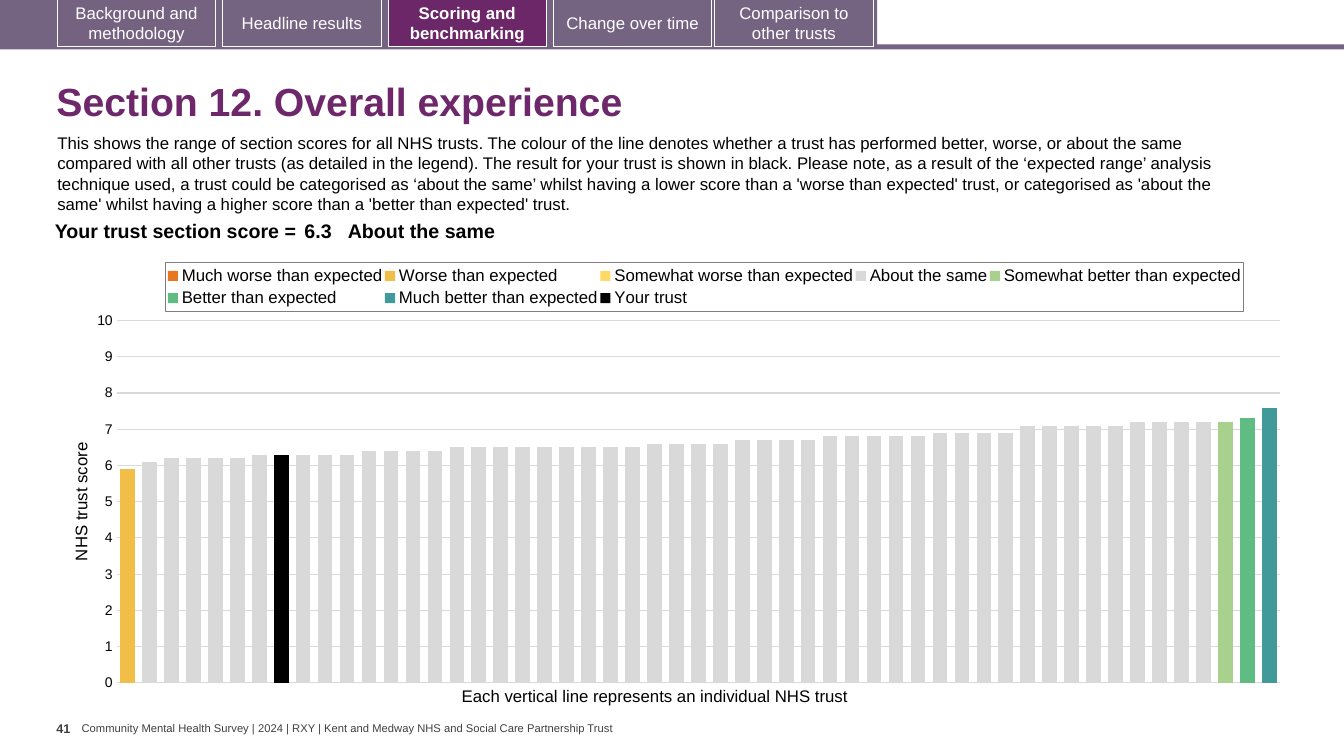
"""Build the overall experience benchmarking page with its trust score chart."""
from copy import deepcopy
from dataclasses import dataclass
from itertools import chain, repeat

from lxml.etree import SubElement
from pptx import Presentation
from pptx.chart.data import CategoryChartData
from pptx.dml.color import RGBColor
from pptx.enum.chart import XL_CHART_TYPE as ChartType
from pptx.enum.chart import XL_LEGEND_POSITION as LegendPosition
from pptx.enum.chart import XL_TICK_LABEL_POSITION as LabelPosition
from pptx.enum.chart import XL_TICK_MARK as TickMark
from pptx.enum.shapes import MSO_SHAPE as Preset
from pptx.enum.text import MSO_ANCHOR as Anchor
from pptx.enum.text import PP_ALIGN as Align
from pptx.oxml import parse_xml
from pptx.oxml.ns import nsdecls, qn
from pptx.util import Inches, Pt

BLACK = RGBColor(0x00, 0x00, 0x00)
WHITE = RGBColor(0xFF, 0xFF, 0xFF)
GREY = RGBColor(0x40, 0x40, 0x40)
GRID = RGBColor(0xD9, 0xD9, 0xD9)
PLUM = RGBColor(0x6D, 0x27, 0x6A)
ACTIVE = RGBColor(0x6B, 0x27, 0x68)
MAUVE = RGBColor(0x75, 0x63, 0x82)
MAUVE_DARK = RGBColor(0x74, 0x62, 0x80)
ORANGE = RGBColor(0xE8, 0x77, 0x22)
AMBER = RGBColor(0xF1, 0xBE, 0x48)
YELLOW = RGBColor(0xFF, 0xD9, 0x66)
LIGHT_GREEN = RGBColor(0xA9, 0xD1, 0x8E)
GREEN = RGBColor(0x5F, 0xBD, 0x83)
TEAL = RGBColor(0x41, 0x99, 0x99)

TRUST_COUNT = 53
INTRO = (
    "This shows the range of section scores for all NHS trusts. The colour of the line denotes "
    "whether a trust has performed better, worse, or about the same compared with all other trusts "
    "(as detailed in the legend). The result for your trust is shown in black. Please note, as a "
    "result of the ‘expected range’ analysis technique used, a trust could be categorised as ‘about "
    "the same’ whilst having a lower score than a 'worse than expected' trust, or categorised as "
    "'about the same' whilst having a higher score than a 'better than expected' trust."
)


@dataclass
class Band:
    left: float
    top: float
    width: float
    height: float
    fill: RGBColor


@dataclass
class Tab:
    label: str
    left: float
    fill: RGBColor
    bold: bool = False


@dataclass
class Rating:
    name: str
    color: RGBColor
    first: int = 0
    runs: tuple = ()

    def values(self):
        scores = list(chain.from_iterable(repeat(score, count) for score, count in self.runs))
        before = [None] * self.first
        return before + scores + [None] * (TRUST_COUNT - self.first - len(scores))


BANDS = [
    Band(0, 0.44, 13.33, 0.05, MAUVE),
    Band(0, 0, 8.7, 0.47, MAUVE),
    Band(0.59, 0, 1.54, 0.46, MAUVE_DARK),
    Band(3.86, 0, 1.54, 0.46, ACTIVE),
]
TABS = [
    Tab("Background and methodology", 0.57, MAUVE_DARK),
    Tab("Headline results", 2.21, MAUVE),
    Tab("Scoring and benchmarking", 3.85, ACTIVE, True),
    Tab("Change over time", 5.49, MAUVE),
    Tab("Comparison to other trusts", 7.09, MAUVE),
]
SAME_RUNS = ((6.1, 1), (6.2, 4), (6.3, 5), (6.4, 4), (6.5, 9), (6.6, 4),
             (6.7, 4), (6.8, 5), (6.9, 4), (7.1, 5), (7.2, 4))
RATINGS = [
    Rating("Much worse than expected", ORANGE),
    Rating("Worse than expected", AMBER, 0, ((5.9, 1),)),
    Rating("Somewhat worse than expected", YELLOW),
    Rating("About the same", GRID, 1, SAME_RUNS),
    Rating("Somewhat better than expected", LIGHT_GREEN, 50, ((7.2, 1),)),
    Rating("Better than expected", GREEN, 51, ((7.3, 1),)),
    Rating("Much better than expected", TEAL, 52, ((7.6, 1),)),
    Rating("Your trust", BLACK, 7, ((6.3, 1),)),
]


def style_font(font, size: float, color: RGBColor = BLACK, bold: bool = False) -> None:
    for name, value in {"name": "Arial", "size": Pt(size), "bold": bold}.items():
        setattr(font, name, value)
    font.color.rgb = color


def write(frame, text: str, size: float, color: RGBColor = BLACK, bold: bool = False,
          align=Align.LEFT, **settings) -> None:
    for name, value in settings.items():
        setattr(frame, name, value)
    para = frame.paragraphs[0]
    para.alignment = align
    span = para.add_run()
    span.text = text
    style_font(span.font, size, color, bold)


def add_rectangle(page, left, top, width, height, fill: RGBColor):
    shape = page.shapes.add_shape(
        Preset.RECTANGLE, Inches(left), Inches(top), Inches(width), Inches(height))
    shape.shadow.inherit = False
    shape.fill.solid()
    shape.fill.fore_color.rgb = fill
    shape.line.fill.background()
    return shape


def add_text(page, left, top, width, height, text: str, size: float, **settings) -> None:
    box = page.shapes.add_textbox(Inches(left), Inches(top), Inches(width), Inches(height))
    write(box.text_frame, text, size, **settings)


def place(parent, position: int, **lengths) -> None:
    """Give a chart part a manual layout."""
    for old in parent.findall(qn("c:layout")):
        parent.remove(old)
    layout = parse_xml(f"<c:layout {nsdecls('c')}><c:manualLayout/></c:layout>")
    for tag, value in lengths.items():
        SubElement(layout[0], qn(f"c:{tag}")).set("val", str(value))
    parent.insert(position, layout)


def move_last_to_right_axis(chart) -> None:
    """Draw the last series against a second pair of axes."""
    area = chart.plots[0]._element.getparent()
    bars = area.find(qn("c:barChart"))
    right_bars = deepcopy(bars)
    bars.remove(bars.findall(qn("c:ser"))[-1])
    for series in right_bars.findall(qn("c:ser"))[:-1]:
        right_bars.remove(series)
    bars.addnext(right_bars)
    left_axes = [area.find(qn("c:catAx")), area.find(qn("c:valAx"))]
    right_axes = [deepcopy(axis) for axis in left_axes]
    numbers = {axis.find(qn("c:axId")).get("val"): str(index)
               for index, axis in enumerate(left_axes, 5001)}
    for part in [right_bars, *right_axes]:
        for tag in ("c:axId", "c:crossAx"):
            for node in part.findall(qn(tag)):
                node.set("val", numbers[node.get("val")])
    value_axis = right_axes[1]
    for tag in ("c:majorGridlines", "c:title"):
        value_axis.remove(value_axis.find(qn(tag)))
    value_axis.find(qn("c:axPos")).set("val", "r")
    value_axis.find(qn("c:tickLblPos")).set("val", "none")
    value_axis.find(qn("c:crosses")).set("val", "max")
    left_axes[1].addnext(right_axes[0])
    right_axes[0].addnext(value_axis)


def add_score_chart(page) -> None:
    data = CategoryChartData()
    data.categories = [str(number) for number in range(1, TRUST_COUNT + 1)]
    for rating in RATINGS:
        data.add_series(rating.name, rating.values())
    chart = page.shapes.add_chart(ChartType.COLUMN_CLUSTERED, Inches(0.67), Inches(2.47),
                                  Inches(12.15), Inches(4.44), data).chart
    style_font(chart.font, 10)
    chart.has_title = False
    plot = chart.plots[0]
    for name, value in {"gap_width": 50, "overlap": 100, "vary_by_categories": False}.items():
        setattr(plot, name, value)
    for series, rating in zip(plot.series, RATINGS):
        series.format.fill.solid()
        series.format.fill.fore_color.rgb = rating.color
    chart.category_axis.visible = False
    axis = chart.value_axis
    for name, value in {"minimum_scale": 0, "maximum_scale": 10, "major_unit": 1,
                        "major_tick_mark": TickMark.NONE, "minor_tick_mark": TickMark.NONE,
                        "tick_label_position": LabelPosition.NEXT_TO_AXIS}.items():
        setattr(axis, name, value)
    axis.format.line.fill.background()
    axis.major_gridlines.format.line.color.rgb = GRID
    axis.major_gridlines.format.line.width = Pt(0.75)
    style_font(axis.tick_labels.font, 10)
    write(axis.axis_title.text_frame, "NHS trust score", 12)
    chart.has_legend = True
    legend = chart.legend
    legend.position = LegendPosition.TOP
    legend.include_in_layout = False
    style_font(legend.font, 12)
    legend._element.find(qn("c:txPr")).addprevious(parse_xml(
        f'<c:spPr {nsdecls("c", "a")}><a:ln w="9525"><a:solidFill><a:srgbClr val="7F7F7F"/>'
        "</a:solidFill></a:ln></c:spPr>"))
    place(legend._element, 1, xMode="edge", yMode="edge", x=0.08, y=0.03, w=0.88, h=0.11)
    place(plot._element.getparent(), 0, layoutTarget="inner", xMode="edge", yMode="edge",
          x=0.04, y=0.16, w=0.95, h=0.81)
    move_last_to_right_axis(chart)


def add_score_table(page) -> None:
    columns = [("Your trust section score =", 2.63, Align.RIGHT, 0.04),
               ("6.3", 0.47, Align.LEFT, 0.04), ("About the same", 8.59, Align.LEFT, 0)]
    table = page.shapes.add_table(1, len(columns), Inches(0.35), Inches(2.15),
                                  Inches(11.69), Inches(0.22)).table
    table.first_row = table.horz_banding = False
    for index, (text, width, align, side) in enumerate(columns):
        table.columns[index].width = Inches(width)
        cell = table.cell(0, index)
        cell.fill.background()
        for name, inset in {"left": side, "right": side, "top": 0.04, "bottom": 0.04}.items():
            setattr(cell, f"margin_{name}", Inches(inset))
        write(cell.text_frame, text, 14, bold=True, align=align)


def main() -> None:
    deck = Presentation()
    deck.slide_width, deck.slide_height = Inches(13.33), Inches(7.5)
    page = deck.slides.add_slide(deck.slide_layouts[5])
    for band in BANDS:
        add_rectangle(page, band.left, band.top, band.width, band.height, band.fill)
    for tab in TABS:
        shape = add_rectangle(page, tab.left, -0.01, 1.57, 0.47, tab.fill)
        shape.line.color.rgb = WHITE
        shape.line.width = Pt(0.75)
        write(shape.text_frame, tab.label, 12, WHITE, tab.bold, Align.CENTER,
              vertical_anchor=Anchor.MIDDLE, word_wrap=True)
    title = page.shapes.title
    for name, value in {"left": 0.46, "top": 0.67, "width": 12.49, "height": 0.72}.items():
        setattr(title, name, Inches(value))
    write(title.text_frame, "Section 12. Overall experience", 28, PLUM, True,
          vertical_anchor=Anchor.MIDDLE)
    title.text_frame.paragraphs[0].line_spacing = 0.9
    add_text(page, 0.47, 1.27, 12.13, 0.91, INTRO, 12, word_wrap=True)
    add_score_chart(page)
    add_score_table(page)
    add_text(page, 4.48, 6.75, 4.11, 0.3, "Each vertical line represents an individual NHS trust",
             12, word_wrap=False)
    add_text(page, 0.56, 7.1, 0.25, 0.4, "41", 9, color=GREY, bold=True, word_wrap=False,
             margin_left=0, margin_right=0)
    add_text(page, 0.81, 7.16, 5.34, 0.13,
             "Community Mental Health Survey | 2024 | RXY | Kent and Medway NHS and Social Care "
             "Partnership Trust", 8, color=GREY, word_wrap=False, vertical_anchor=Anchor.MIDDLE,
             margin_left=0, margin_right=0, margin_top=0, margin_bottom=0)
    deck.save("out.pptx")


if __name__ == "__main__":
    main()
